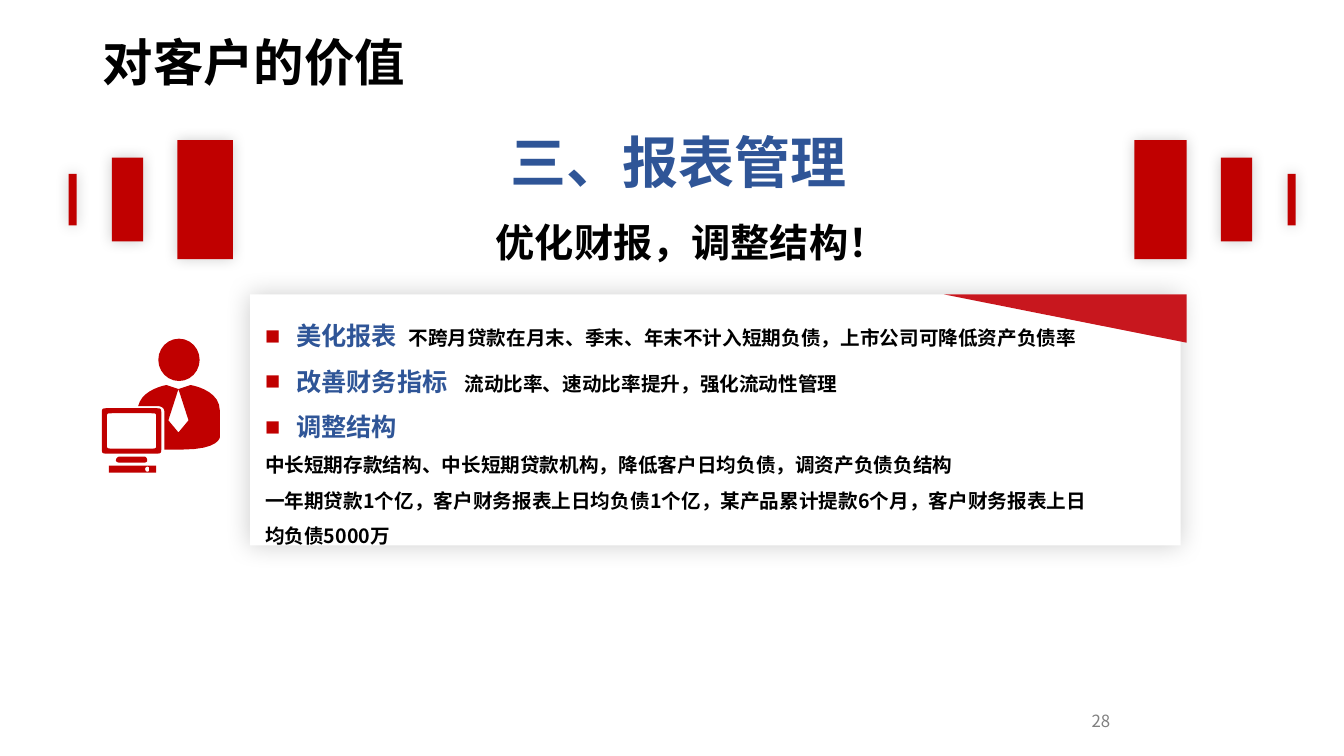
from lxml import etree
from pptx import Presentation
from pptx.dml.color import RGBColor
from pptx.enum.shapes import MSO_SHAPE as Kind
from pptx.enum.text import MSO_ANCHOR as Anchor, PP_ALIGN as Align
from pptx.oxml.ns import qn
from pptx.util import Inches, Pt

RED = RGBColor(0xC0, 0x00, 0x00)
FLAG = RGBColor(0xC8, 0x17, 0x1E)
BLUE = RGBColor(0x2F, 0x55, 0x97)
BLACK = RGBColor(0, 0, 0)
GREY = RGBColor(0x80, 0x80, 0x80)
WHITE = RGBColor(0xFF, 0xFF, 0xFF)
NOTO, ARIAL = "Noto Sans CJK SC", "Arial"

# Content
TITLE = "对客户的价值"
HEAD = "三、报表管理"
SUB = "优化财报，调整结构！"
# heading, extra gap in points, detail
ITEMS = [
    ("美化报表", 4, "不跨月贷款在月末、季末、年末不计入短期负债，上市公司可降低资产负债率"),
    ("改善财务指标", 8, "流动比率、速动比率提升，强化流动性管理"),
    ("调整结构", 0, ""),
]
NOTES = [
    "中长短期存款结构、中长短期贷款机构，降低客户日均负债，调资产负债负结构",
    "一年期贷款1个亿，客户财务报表上日均负债1个亿，某产品累计提款6个月，客户财务报表上日均负债5000万",
]
PAGE = "28"

# Bars: left, width, height, shadow angle
BARS = [
    (0.68, 0.08, 0.51, 225), (1.11, 0.31, 0.83, 225), (1.76, 0.55, 1.18, 225),
    (11.25, 0.52, 1.18, 315), (12.11, 0.31, 0.83, 315), (12.77, 0.08, 0.51, 225),
]
BAR_MID = 1.98

# Outlines: a pair is a straight step, six numbers are a curve
BODY = [[(1.89, 3.82), (1.77, 3.86), (1.87, 4.17), (1.77, 4.29), (1.67, 4.17),
         (1.77, 3.86), (1.65, 3.82), (1.55, 3.84, 1.4, 3.9, 1.37, 4.03),
         (1.57, 4.03), (1.6, 4.03, 1.63, 4.05, 1.63, 4.08), (1.63, 4.46),
         (1.81, 4.46), (2.17, 4.46, 2.18, 4.34, 2.18, 4.34), (2.18, 4.07),
         (2.18, 3.91, 2, 3.84, 1.89, 3.82)]]
BASE = [[(1.08, 4.69), (1.55, 4.69), (1.55, 4.62), (1.08, 4.62)],
        [(1.46, 4.63), (1.48, 4.63, 1.48, 4.64, 1.48, 4.65),
         (1.48, 4.67, 1.48, 4.68, 1.46, 4.68),
         (1.45, 4.68, 1.44, 4.67, 1.44, 4.65),
         (1.44, 4.64, 1.45, 4.63, 1.46, 4.63)]]
STAND = [[(1.43, 4.59), (1.45, 4.59, 1.46, 4.58, 1.46, 4.57),
          (1.46, 4.55, 1.45, 4.53, 1.43, 4.53), (1.18, 4.53),
          (1.16, 4.54, 1.15, 4.55, 1.15, 4.57),
          (1.15, 4.58, 1.17, 4.59, 1.18, 4.59)]]


def ring(x, y, x2, y2, r):
    """Outline of a box with rounded corners."""
    return [(x + r, y), (x2 - r, y), (x2, y, x2, y, x2, y + r),
            (x2, y2 - r), (x2, y2, x2, y2, x2 - r, y2),
            (x + r, y2), (x, y2, x, y2, x, y2 - r),
            (x, y + r), (x, y, x, y, x + r, y)]


SCREEN = [ring(1.01, 4.05, 1.6, 4.5, 0.06), ring(1.06, 4.1, 1.55, 4.45, 0.05)]

deck = Presentation()
deck.slide_width, deck.slide_height = Inches(13.33), Inches(7.5)
slide = deck.slides.add_slide(deck.slide_layouts[6])
shapes = slide.shapes


def paint(shape, color):
    shape.shadow.inherit = False
    shape.fill.solid()
    shape.fill.fore_color.rgb = color
    shape.line.fill.background()
    return shape


def block(kind, x, y, w, h, color):
    box = [Inches(v) for v in (x, y, w, h)]
    return paint(shapes.add_shape(kind, *box), color)


def glow(shape, blur, angle):
    fx = shape._element.spPr.find(qn("a:effectLst"))
    cast = etree.SubElement(fx, qn("a:outerShdw"), blurRad=str(Pt(blur)),
                            dist="0", dir=str(angle * 60000),
                            algn="ctr", rotWithShape="0")
    tint = etree.SubElement(cast, qn("a:srgbClr"), val="000000")
    etree.SubElement(tint, qn("a:alpha"), val="20000")


def trace(steps):
    """Points along an outline, in EMU."""
    pts = [steps[0]]
    for step in steps[1:]:
        if len(step) == 2:
            pts.append(step)
            continue
        ends = (pts[-1], step[:2], step[2:4], step[4:])
        for t in (k / 8 for k in range(1, 9)):
            u = 1 - t
            mix = (u ** 3, 3 * u * u * t, 3 * u * t * t, t ** 3)
            pts.append(tuple(sum(m * e[i] for m, e in zip(mix, ends))
                             for i in (0, 1)))
    return [(Inches(x), Inches(y)) for x, y in pts]


def draw(loops):
    first, *rest = [trace(loop) for loop in loops]
    form = shapes.build_freeform(*first[0])
    form.add_line_segments(first[1:], close=True)
    for pts in rest:
        form.move_to(*pts[0])
        form.add_line_segments(pts[1:], close=True)
    paint(form.convert_to_shape(), RED)


def frame(x, y, w, h, anchor=Anchor.TOP):
    text = shapes.add_textbox(*[Inches(v) for v in (x, y, w, h)]).text_frame
    text.word_wrap = True
    text.vertical_anchor = anchor
    return text


def para(text, first=False, align=Align.LEFT, space=1.5):
    p = text.paragraphs[0] if first else text.add_paragraph()
    p.alignment, p.line_spacing = align, space
    return p


def write(p, words, size, color, bold=True, face=NOTO, gap=0):
    run = p.add_run()
    run.text = words
    font = run.font
    font.size, font.bold, font.name = Pt(size), bold, face
    font.color.rgb = color
    props = run._r.get_or_add_rPr()
    etree.SubElement(props, qn("a:ea"), typeface=NOTO)
    if gap:
        props.set("spc", str(gap * 100))


def bullet(p):
    props = p._p.get_or_add_pPr()
    props.set("marL", str(Inches(0.31)))
    props.set("indent", str(Inches(-0.31)))
    tint = etree.SubElement(props, qn("a:buClr"))
    etree.SubElement(tint, qn("a:srgbClr"), val=str(RED))
    etree.SubElement(props, qn("a:buFont"), typeface=ARIAL)
    etree.SubElement(props, qn("a:buChar"), char="■")


# Page number and title
text = frame(9.42, 6.95, 3, 0.4, Anchor.MIDDLE)
write(para(text, True, Align.CENTER, 1), PAGE, 12, GREY, False)
text = frame(0.92, 0.2, 11.72, 0.89, Anchor.MIDDLE)
write(para(text, True, Align.JUSTIFY, 0.9), TITLE, 36, BLACK, face=ARIAL)

# Side bars, centred on one line
for x, w, h, angle in BARS:
    glow(block(Kind.RECTANGLE, x, BAR_MID - h / 2, w, h, RED), 10, angle)

# Heading
text = frame(2.55, 0.88, 8.36, 1.82)
write(para(text, True, Align.CENTER), HEAD, 40, BLUE, face=ARIAL)
p = para(text, align=Align.CENTER)
p._p.get_or_add_pPr().set("marL", str(Inches(0.26)))
write(p, SUB, 28, BLACK)

# Panel with corner flag
glow(block(Kind.RECTANGLE, 2.48, 2.92, 9.23, 2.49, WHITE), 18, 0)
block(Kind.RIGHT_TRIANGLE, 9.36, 2.92, 2.41, 0.48, FLAG).rotation = 180

# Panel text
text = frame(2.53, 2.98, 8.45, 2.48)
for i, (name, gap, detail) in enumerate(ITEMS):
    p = para(text, i == 0)
    bullet(p)
    write(p, name, 18, BLUE)
    if detail:
        write(p, " ", 18, BLUE, gap=gap)
        write(p, detail, 14, BLACK)
for note in NOTES:
    write(para(text), note, 14, BLACK)

# Clerk at a computer
block(Kind.OVAL, 1.57, 3.36, 0.41, 0.42, RED)
for loops in (BODY, BASE, STAND, SCREEN):
    draw(loops)

deck.save("out.pptx")
